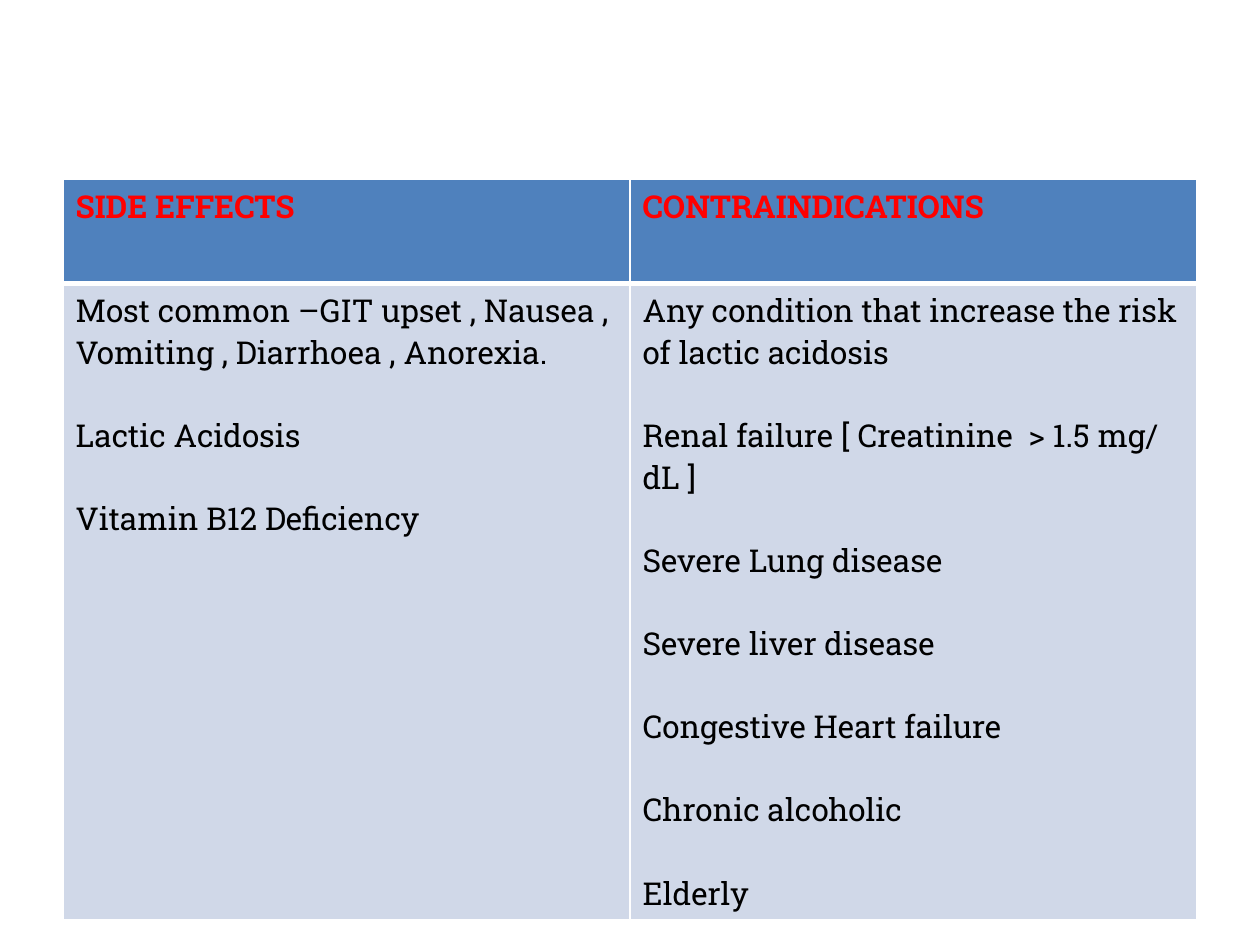
from dataclasses import dataclass

from lxml.etree import SubElement
from pptx import Presentation
from pptx.dml.color import RGBColor
from pptx.oxml.ns import qn
from pptx.util import Inches, Pt


@dataclass(frozen=True)
class Theme:
    font: str = "Roboto Slab"
    size: float = 18
    paragraph_gap: float = 23.75
    header_text: str = "FF0000"
    body_text: str = "000000"
    header_fill: str = "4F81BD"
    body_fill: str = "D0D8E8"
    border: str = "FFFFFF"


theme = Theme()


def add_border(cell, side, width):
    """Draw one side (L, R, T or B) of a cell; call before setting its fill."""
    ln = SubElement(cell._tc.get_or_add_tcPr(), qn(f"a:ln{side}"), w=str(Pt(width)))
    fill = SubElement(ln, qn("a:solidFill"))
    SubElement(fill, qn("a:srgbClr"), val=theme.border)


columns = [
    ("SIDE EFFECTS", [
        "Most common –GIT upset , Nausea , Vomiting , Diarrhoea , Anorexia.",
        "Lactic Acidosis",
        "Vitamin B12 Deficiency",
    ]),
    ("CONTRAINDICATIONS", [
        "Any condition that increase the risk of lactic acidosis",
        "Renal failure [ Creatinine  > 1.5 mg/ dL ]",
        "Severe Lung disease",
        "Severe liver disease",
        "Congestive Heart failure",
        "Chronic alcoholic",
        "Elderly",
    ]),
]
row_heights = [0.83, 5.05]

prs = Presentation()
prs.slide_width, prs.slide_height = Inches(10), Inches(7.5)
s = prs.slides.add_slide(prs.slide_layouts[6])

table = s.shapes.add_table(
    len(row_heights), len(columns),
    Inches(0.5), Inches(1.42), Inches(9), Inches(sum(row_heights)),
).table
for row, height in zip(table.rows, row_heights):
    row.height = Inches(height)

for col, (heading, items) in enumerate(columns):
    table.columns[col].width = Inches(4.5)
    for row, lines in enumerate([[heading], items]):
        is_header = row == 0
        cell = table.cell(row, col)
        for side in "LRTB":
            touches_header_rule = side == ("B" if is_header else "T")
            add_border(cell, side, 3 if touches_header_rule else 1)
        cell.fill.solid()
        cell.fill.fore_color.rgb = RGBColor.from_string(
            theme.header_fill if is_header else theme.body_fill)

        tf = cell.text_frame
        tf.text = "\n".join(lines)
        for i, p in enumerate(tf.paragraphs):
            if i:
                p.space_before = Pt(theme.paragraph_gap)
            font = p.runs[0].font
            font.name = theme.font
            font.size = Pt(theme.size)
            font.bold = is_header
            font.color.rgb = RGBColor.from_string(
                theme.header_text if is_header else theme.body_text)

prs.save("out.pptx")
